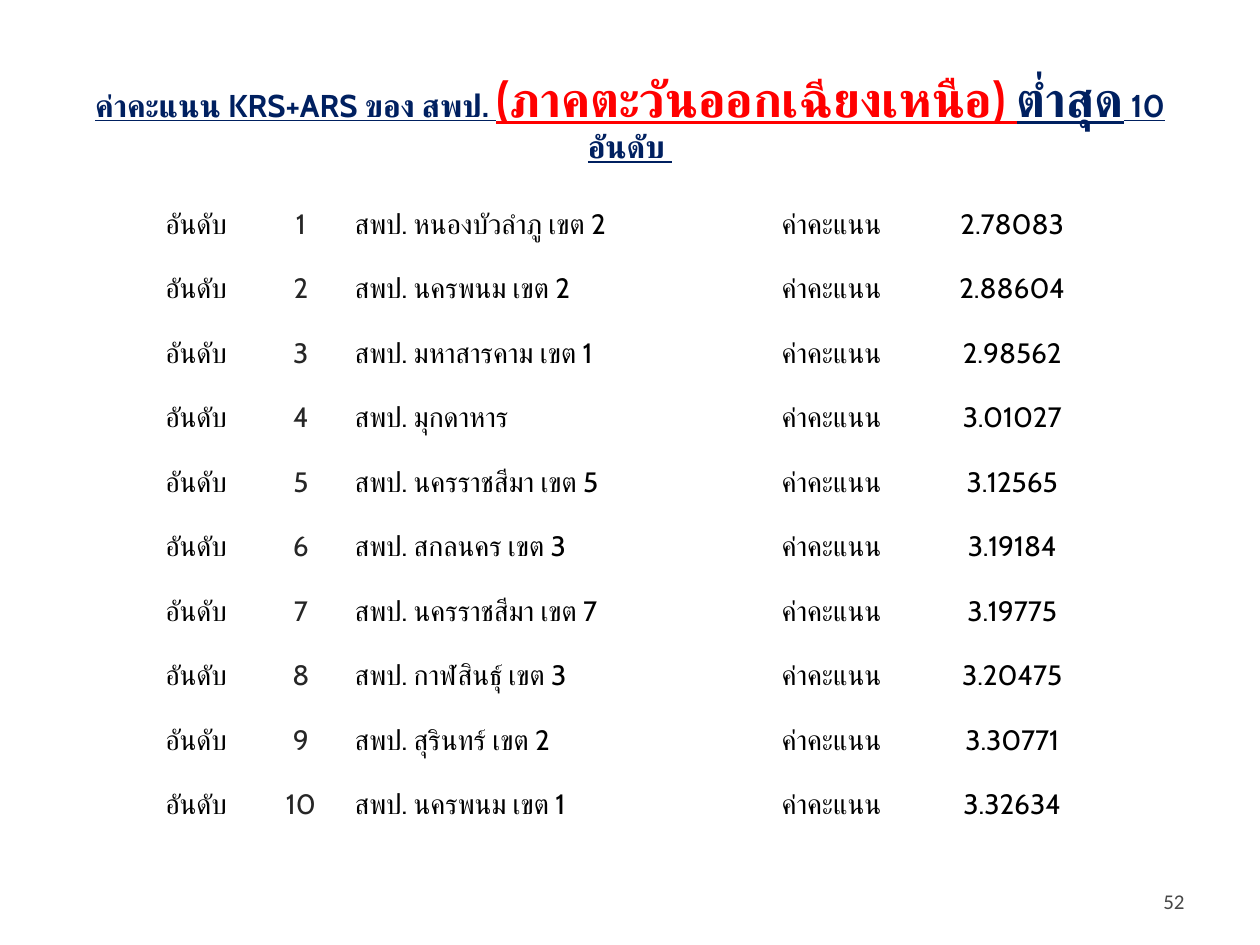
"""Build a slide ranking the ten lowest KRS+ARS scores in the Northeast."""
from lxml import etree
from pptx import Presentation
from pptx.dml.color import RGBColor
from pptx.enum.text import MSO_ANCHOR, PP_ALIGN
from pptx.oxml.ns import qn
from pptx.util import Cm, Pt

LEFT, CENTER, RIGHT = PP_ALIGN.LEFT, PP_ALIGN.CENTER, PP_ALIGN.RIGHT
MIDDLE = MSO_ANCHOR.MIDDLE
NAVY = RGBColor(0x00, 0x20, 0x60)
RED = RGBColor(0xFF, 0x00, 0x00)
BLACK = RGBColor(0x00, 0x00, 0x00)
CHARCOAL = RGBColor(0x26, 0x26, 0x26)
GRAY = RGBColor(0x47, 0x47, 0x47)

TITLE = [
    ("ค่าคะแนน KRS+ARS ของ สพป. ", 18, NAVY),
    ("(ภาคตะวันออกเฉียงเหนือ) ", 28, RED),
    ("ต่ำสุด", 28, NAVY),
    (" 10 อันดับ ", 18, NAVY),
]
RANK_LABEL, SCORE_LABEL = "อันดับ", "ค่าคะแนน"
SCORES = [
    ("สพป. หนองบัวลำภู เขต 2", "2.78083"),
    ("สพป. นครพนม เขต 2", "2.88604"),
    ("สพป. มหาสารคาม เขต 1", "2.98562"),
    ("สพป. มุกดาหาร", "3.01027"),
    ("สพป. นครราชสีมา เขต 5", "3.12565"),
    ("สพป. สกลนคร เขต 3", "3.19184"),
    ("สพป. นครราชสีมา เขต 7", "3.19775"),
    ("สพป. กาฬสินธุ์ เขต 3", "3.20475"),
    ("สพป. สุรินทร์ เขต 2", "3.30771"),
    ("สพป. นครพนม เขต 1", "3.32634"),
]
PAGE_NUMBER = "52"
COLUMNS = [
    (2.11, CENTER, BLACK),
    (2.11, CENTER, CHARCOAL),
    (7.57, LEFT, BLACK),
    (4.14, CENTER, BLACK),
    (3.15, CENTER, BLACK),
]
ROW_HEIGHT = 1.3
INSET = 0.03


def set_font(font, name, size, color):
    font.name, font.size = name, Pt(size)
    font.color.rgb = color
    properties = font.fill._xPr
    etree.SubElement(properties, qn("a:cs")).set("typeface", name)


def add_line(page, left, top, width, height, align):
    box = page.shapes.add_textbox(Cm(left), Cm(top), Cm(width), Cm(height))
    frame = box.text_frame
    frame.word_wrap = True
    frame.vertical_anchor = MIDDLE
    para = frame.paragraphs[0]
    para.alignment = align
    return para


def add_title(page):
    para = add_line(page, 1.27, 0.76, 22.86, 3.18, CENTER)
    for text, size, color in TITLE:
        span = para.add_run()
        span.text = text
        set_font(span.font, "Cabin", size, color)
        span.font.bold = span.font.underline = True


def add_scores(page):
    width = sum(column[0] for column in COLUMNS)
    table = page.shapes.add_table(
        len(SCORES), len(COLUMNS), Cm(2.9), Cm(3.86),
        Cm(width), Cm(ROW_HEIGHT * len(SCORES))).table
    table.first_row = table.horz_banding = False
    for column, (column_width, _, _) in zip(table.columns, COLUMNS):
        column.width = Cm(column_width)
    for rank, (row, (office, score)) in enumerate(zip(table.rows, SCORES), 1):
        row.height = Cm(ROW_HEIGHT)
        texts = (RANK_LABEL, str(rank), office, SCORE_LABEL, score)
        for cell, text, (_, align, color) in zip(row.cells, texts, COLUMNS):
            cell.fill.background()
            cell.vertical_anchor = MIDDLE
            cell.margin_left = cell.margin_right = cell.margin_top = Cm(INSET)
            cell.margin_bottom = 0
            para = cell.text_frame.paragraphs[0]
            para.text, para.alignment = text, align
            set_font(para.font, "Cabin", 16, color)


def add_page_number(page):
    para = add_line(page, 18.21, 17.65, 5.92, 1.02, RIGHT)
    para.text = PAGE_NUMBER
    set_font(para.font, "Calibri", 12, GRAY)


def main():
    deck = Presentation()
    deck.slide_width, deck.slide_height = Cm(25.4), Cm(19.05)
    page = deck.slides.add_slide(deck.slide_layouts[6])
    add_title(page)
    add_scores(page)
    add_page_number(page)
    deck.save("out.pptx")


if __name__ == "__main__":
    main()
